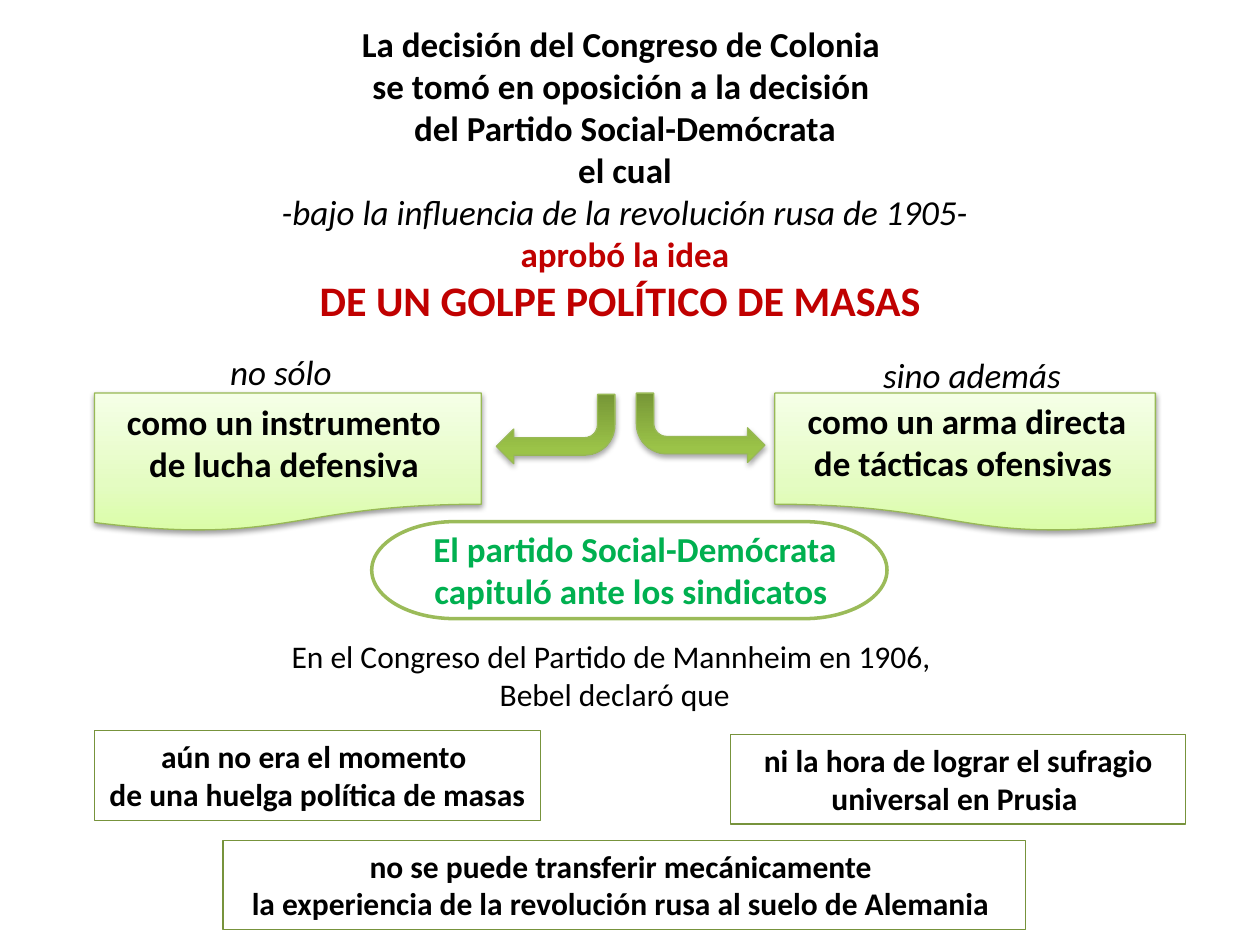
from lxml.etree import SubElement
from pptx import Presentation
from pptx.dml.color import RGBColor
from pptx.enum.shapes import MSO_SHAPE
from pptx.enum.text import MSO_ANCHOR, MSO_AUTO_SIZE, PP_ALIGN
from pptx.oxml.ns import qn
from pptx.util import Inches, Pt

BLACK, RED, GREEN = "000000", "C00000", "00B050"
BOX_LINE, PANEL_LINE = "77933C", "98B955"
PANEL_STOPS = [(0, "DAFDA7"), (35, "E4FCC2"), (100, "F5FFE7")]
ARROW_STOPS = [(0, "779737"), (80, "9BC348"), (100, "9DC746")]

PLAIN = {"name": "Calibri", "size": Pt(20), "bold": False, "italic": False}
BOLD = PLAIN | {"bold": True}
ITALIC = PLAIN | {"italic": True}
HEADLINE = BOLD | {"size": Pt(24)}
SMALL = PLAIN | {"size": Pt(18)}
SMALL_BOLD = BOLD | {"size": Pt(18)}


def rgb(hex_color):
    return RGBColor.from_string(hex_color)


def styled(lines, font_format, color=BLACK):
    return [(line, font_format, color) for line in lines]


def write_lines(holder, lines):
    """Fill a shape or text box with centred (text, format, colour) paragraphs."""
    frame = holder.text_frame
    frame.word_wrap = True
    frame.auto_size = MSO_AUTO_SIZE.SHAPE_TO_FIT_TEXT
    frame.vertical_anchor = MSO_ANCHOR.TOP
    for index, (text, font_format, color) in enumerate(lines):
        paragraph = frame.add_paragraph() if index else frame.paragraphs[0]
        paragraph.alignment = PP_ALIGN.CENTER
        run = paragraph.add_run()
        run.text = text
        for attribute, value in font_format.items():
            setattr(run.font, attribute, value)
        run.font.color.rgb = rgb(color)


def add_label(slide, bounds, lines):
    label = slide.shapes.add_textbox(*map(Inches, bounds))
    write_lines(label, lines)


def add_outline(slide, preset, bounds, line_color, line_width=0.75):
    outline = slide.shapes.add_shape(preset, *map(Inches, bounds))
    outline.shadow.inherit = False
    outline.fill.background()
    outline.line.color.rgb = rgb(line_color)
    outline.line.width = Pt(line_width)
    return outline


def add_color(parent, hex_color):
    return SubElement(parent, qn("a:srgbClr"), val=hex_color)


def add_gradient(shape, stops):
    """Run the colour stops from the bottom edge to the top edge."""
    properties = shape.fill._xPr
    gradient = SubElement(properties, qn("a:gradFill"), rotWithShape="1")
    stop_list = SubElement(gradient, qn("a:gsLst"))
    for percent, color in stops:
        stop = SubElement(stop_list, qn("a:gs"), pos=str(percent * 1000))
        add_color(stop, color)
    SubElement(gradient, qn("a:lin"), ang=str(270 * 60000), scaled="0")
    properties.replace(properties.find(qn("a:noFill")), gradient)


def add_drop_shadow(shape, opacity, distance):
    effects = shape.fill._xPr.find(qn("a:effectLst"))
    shadow = SubElement(effects, qn("a:outerShdw"), blurRad=str(Pt(3.15)),
                        dist=str(Pt(distance)), dir=str(90 * 60000),
                        rotWithShape="0")
    SubElement(add_color(shadow, BLACK), qn("a:alpha"), val=str(opacity * 1000))


def add_raised(slide, preset, bounds, stops, shadow, mirrored, rotation=0):
    """Add a gradient shape with a drop shadow, mirrored on the right side."""
    raised = add_outline(slide, preset, bounds, PANEL_LINE)
    add_gradient(raised, stops)
    add_drop_shadow(raised, *shadow)
    raised.rotation = rotation
    if mirrored:
        raised._element.spPr.find(qn("a:xfrm")).set("flipH", "1")


def add_box(slide, bounds, lines):
    box = add_outline(slide, MSO_SHAPE.RECTANGLE, bounds, BOX_LINE)
    write_lines(box, styled(lines, SMALL_BOLD))


def main():
    presentation = Presentation()
    presentation.slide_width, presentation.slide_height = Inches(10), Inches(7.5)
    slide = presentation.slides.add_slide(presentation.slide_layouts[6])

    capitulation = add_outline(slide, MSO_SHAPE.FLOWCHART_TERMINATOR,
                               (2.95, 4.14, 4.09, 0.77), "9BBB59", 2)
    capitulation.fill.solid()
    capitulation.fill.fore_color.rgb = rgb("FFFFFF")

    for bounds, mirrored in [((0.75, 3.12, 3.07, 1.1), False),
                             ((6.15, 3.12, 3.02, 1.1), True)]:
        add_raised(slide, MSO_SHAPE.FLOWCHART_DOCUMENT, bounds, PANEL_STOPS,
                   (38, 1.6), mirrored)

    decision = ["La decisión del Congreso de Colonia ",
                "se tomó en oposición a la decisión ",
                "del Partido Social-Demócrata", "el cual"]
    add_label(slide, (0.59, 0.13, 8.74, 2.52), [
        *styled(decision, BOLD),
        ("-bajo la influencia de la revolución rusa de 1905-", ITALIC, BLACK),
        ("aprobó la idea", BOLD, RED),
        ("DE UN GOLPE POLÍTICO DE MASAS ", HEADLINE, RED),
    ])

    labels = [
        ((0.51, 5.01, 8.74, 0.71), SMALL, BLACK,
         ["En el Congreso del Partido de Mannheim en 1906, ", "Bebel declaró que"]),
        ((0.75, 3.13, 3.07, 0.77), BOLD, BLACK,
         ["como un instrumento ", "de lucha defensiva "]),
        ((6.65, 2.76, 2.13, 0.44), ITALIC, BLACK, ["sino además"]),
        ((1.11, 2.73, 2.24, 0.44), ITALIC, BLACK, ["no sólo"]),
        ((6.18, 3.12, 2.99, 0.77), BOLD, BLACK,
         ["como un arma directa de tácticas ofensivas "]),
        ((2.96, 4.14, 4.16, 0.77), BOLD, GREEN,
         ["El partido Social-Demócrata", "capituló ante los sindicatos "]),
    ]
    for bounds, font_format, color, lines in labels:
        add_label(slide, bounds, styled(lines, font_format, color))

    add_box(slide, (0.75, 5.8, 3.54, 0.71),
            ["aún no era el momento ", "de una huelga política de masas"])
    add_box(slide, (1.77, 6.67, 6.37, 0.71),
            ["no se puede transferir mecánicamente ",
             "la experiencia de la revolución rusa al suelo de Alemania "])
    add_box(slide, (5.8, 5.83, 3.61, 0.71),
            ["ni la hora de lograr el sufragio universal en Prusia "])

    for bounds, mirrored in [((3.94, 3.13, 0.94, 0.55), False),
                             ((5.05, 3.12, 1.02, 0.55), True)]:
        add_raised(slide, MSO_SHAPE.BENT_ARROW, bounds, ARROW_STOPS,
                   (35, 1.8), mirrored, rotation=180)

    presentation.save("out.pptx")


if __name__ == "__main__":
    main()
